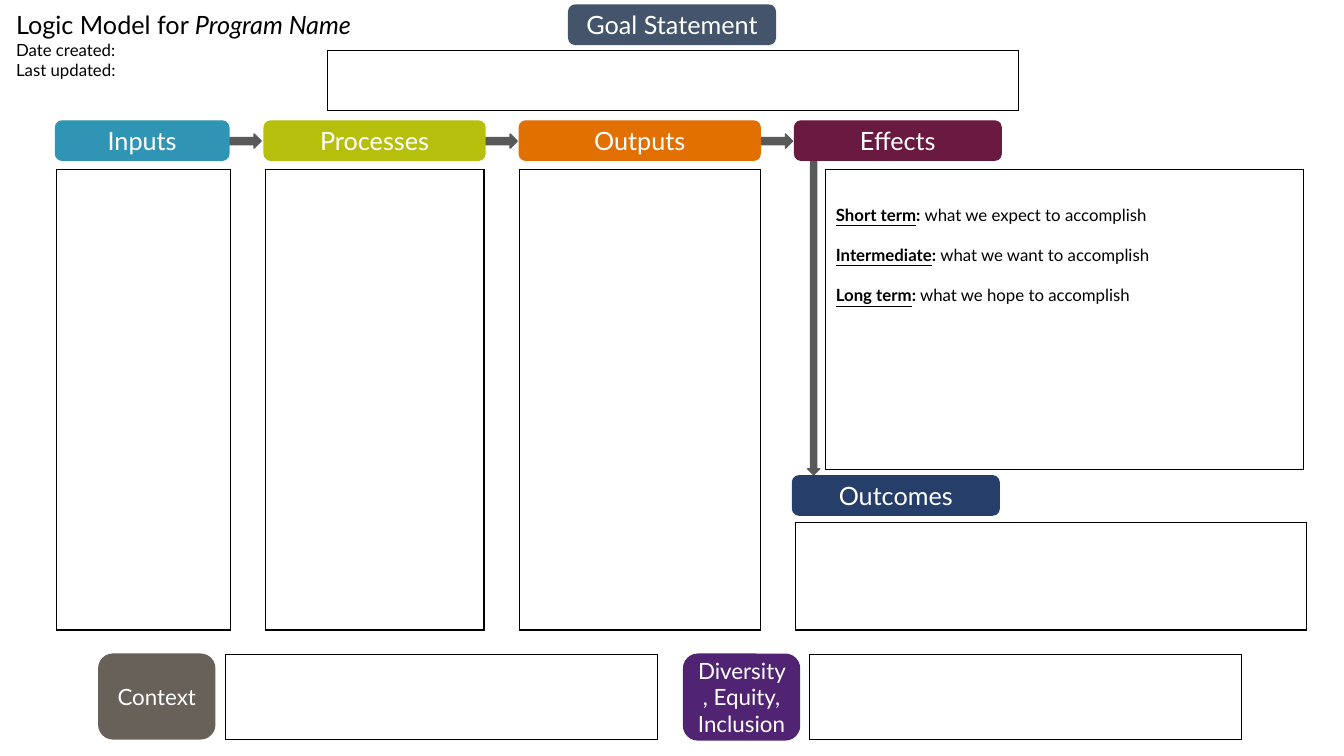
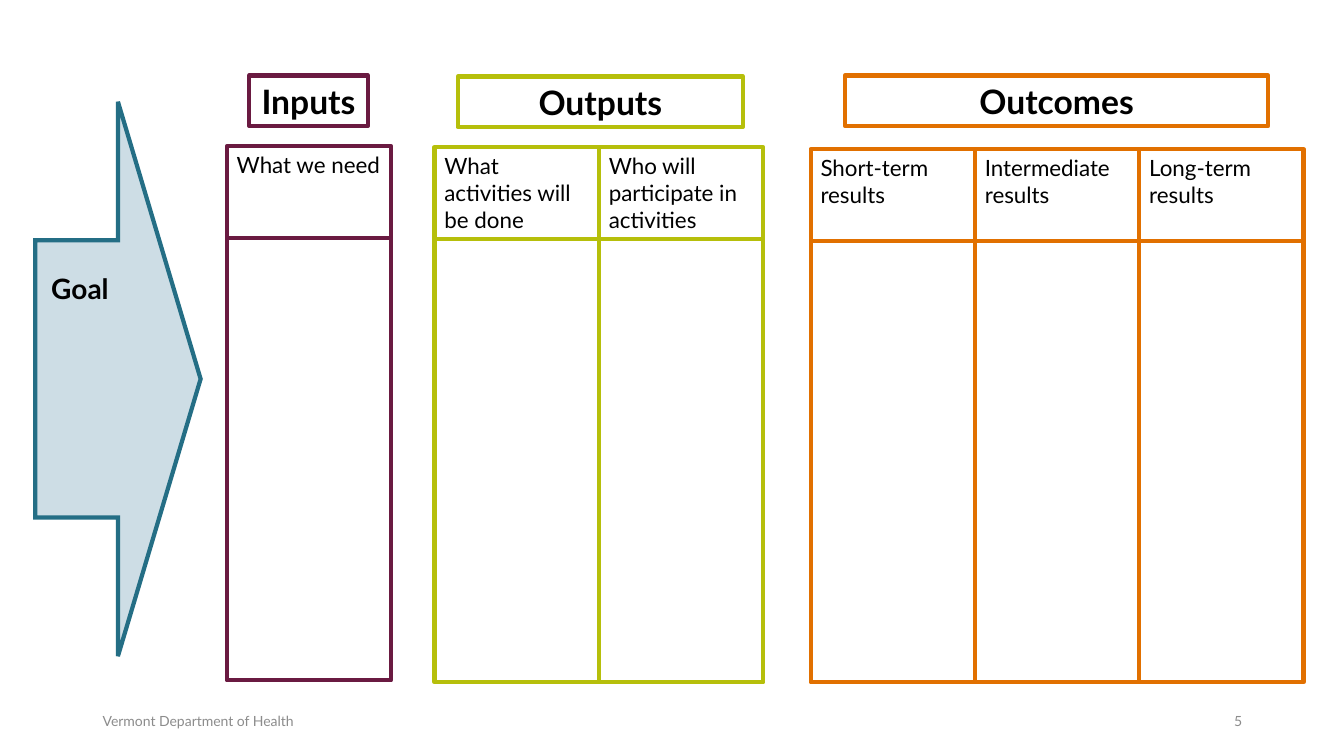
from dataclasses import dataclass

from lxml import etree
from pptx import Presentation
from pptx import util as u
from pptx.dml.color import RGBColor
from pptx.enum import shapes, text
from pptx.oxml import ns

SHAPE = shapes.MSO_SHAPE
ALIGN = text.PP_ALIGN
ANCHOR = text.MSO_ANCHOR


# Shared look
@dataclass(frozen=True)
class Theme:
    font: str = "Lato"
    black: str = "000000"
    white: str = "FFFFFF"
    arrow: str = "595959"
    footer: str = "8C8C8C"
    slate: str = "44546A"
    sky: str = "3095B4"
    lime: str = "B6BF0B"
    orange: str = "E17000"
    plum: str = "6A1A41"
    navy: str = "263F6A"
    stone: str = "68615A"
    purple: str = "512373"
    goal_fill: str = "CDDDE5"
    goal_line: str = "246E85"
    small: int = 10
    body: int = 12
    label: int = 16
    title: int = 18
    goal: int = 20
    heading: int = 24
    thin: int = 1
    thick: int = 3


THEME = Theme()


# Geometry and text records
def px(length: int) -> u.Emu:
    """One px is a hundredth of an inch."""
    return u.Emu(length * 9144)


@dataclass(frozen=True)
class Box:
    left: int
    top: int
    width: int
    height: int

    @property
    def right(self) -> int:
        return self.left + self.width

    def emu(self) -> tuple:
        return px(self.left), px(self.top), px(self.width), px(self.height)


@dataclass(frozen=True)
class Span:
    words: str
    size: int
    color: str = THEME.black
    bold: bool = False
    italic: bool = False
    underline: bool = False


@dataclass(frozen=True)
class Label:
    words: str
    box: Box
    color: str
    size: int = THEME.title


@dataclass(frozen=True)
class Group:
    name: str
    heading: Box
    color: str
    left: int
    top: int
    step: int
    bottom: int
    columns: tuple


# Drawing functions
def write(frame, lines: list, align=ALIGN.LEFT, anchor=ANCHOR.TOP, gap: float = 0) -> None:
    frame.word_wrap = True
    frame.auto_size = text.MSO_AUTO_SIZE.NONE
    frame.vertical_anchor = anchor
    fill_lines(frame, lines, align, gap)


def fill_lines(frame, lines: list, align=ALIGN.LEFT, gap: float = 0) -> None:
    for index, spans in enumerate(lines):
        para = frame.add_paragraph() if index else frame.paragraphs[0]
        para.alignment = align
        if index and gap:
            para.space_before = u.Pt(gap)
        for span in spans:
            run = para.add_run()
            run.text = span.words
            font = run.font
            font.name, font.size = THEME.font, u.Pt(span.size)
            font.bold, font.italic, font.underline = span.bold, span.italic, span.underline
            font.color.rgb = RGBColor.from_string(span.color)


def add_figure(page, kind, box: Box, line: str, weight: int, fill: str = ""):
    figure = page.shapes.add_shape(kind, *box.emu())
    figure.shadow.inherit = False
    if fill:
        figure.fill.solid()
        figure.fill.fore_color.rgb = RGBColor.from_string(fill)
    else:
        figure.fill.background()
    figure.line.color.rgb = RGBColor.from_string(line)
    figure.line.width = u.Pt(weight)
    return figure


def add_text(page, box: Box, span: Span, align=ALIGN.LEFT, anchor=ANCHOR.TOP) -> None:
    write(page.shapes.add_textbox(*box.emu()).text_frame, [[span]], align, anchor)


def add_label(page, label: Label) -> None:
    figure = add_figure(page, SHAPE.ROUNDED_RECTANGLE, label.box, label.color, THEME.thin, label.color)
    write(figure.text_frame, [[Span(label.words, label.size, THEME.white)]], ALIGN.CENTER, ANCHOR.MIDDLE)


def add_frame(page, box: Box):
    """A one-cell table with a thin black border."""
    table = page.shapes.add_table(1, 1, *box.emu()).table
    table.first_row = table.horz_banding = False
    cell = table.cell(0, 0)
    cell.fill.solid()
    cell.fill.fore_color.rgb = RGBColor.from_string(THEME.white)
    properties = cell._tc.get_or_add_tcPr()
    for index, side in enumerate(("lnL", "lnR", "lnT", "lnB")):
        border = etree.Element(ns.qn(f"a:{side}"), w=str(u.Pt(THEME.thin)))
        paint = etree.SubElement(border, ns.qn("a:solidFill"))
        etree.SubElement(paint, ns.qn("a:srgbClr"), val=THEME.black)
        properties.insert(index, border)
    return cell


def add_arrow(page, kind, box: Box) -> None:
    add_figure(page, kind, box, THEME.arrow, THEME.thin, THEME.arrow)


# Slide 1: logic model
STAGES = [
    Label("Inputs", Box(55, 120, 172, 39), THEME.sky),
    Label("Processes", Box(262, 120, 219, 39), THEME.lime),
    Label("Outputs", Box(515, 120, 239, 39), THEME.orange),
    Label("Effects", Box(788, 120, 205, 39), THEME.plum),
]
OTHER_LABELS = [
    Label("Goal Statement", Box(564, 5, 205, 39), THEME.slate),
    Label("Outcomes", Box(786, 472, 205, 39), THEME.navy),
    Label("Context", Box(98, 649, 115, 84), THEME.stone, THEME.label),
    Label("Diversity, Equity, Inclusion", Box(678, 649, 115, 85), THEME.purple, THEME.label),
]
EMPTY_FRAMES = [
    Box(56, 168, 173, 457),
    Box(263, 168, 217, 457),
    Box(515, 168, 239, 457),
    Box(325, 50, 685, 60),
    Box(789, 518, 507, 107),
    Box(224, 649, 428, 85),
    Box(803, 649, 428, 85),
]
EFFECTS = [
    ("Short term", "what we expect to accomplish"),
    ("Intermediate", "what we want to accomplish"),
    ("Long term", "what we hope to accomplish"),
]


def build_logic_model(deck) -> None:
    page = deck.slides.add_slide(deck.slide_layouts[5])

    # Title and dates
    title = page.shapes.title
    title.left, title.top, title.width, title.height = Box(6, 4, 405, 111).emu()
    write(title.text_frame, [
        [Span("Logic Model for ", THEME.title), Span("Program Name", THEME.title, italic=True)],
        [Span("Date created:", THEME.body)],
        [Span("Last updated:", THEME.body)],
    ])

    # Arrows, then labels
    add_arrow(page, SHAPE.DOWN_ARROW, Box(801, 159, 12, 312))
    for stage in STAGES[:-1]:
        add_arrow(page, SHAPE.RIGHT_ARROW, Box(stage.box.right, 133, 32, 14))
    for label in STAGES + OTHER_LABELS:
        add_label(page, label)

    # Frames to fill in
    for box in EMPTY_FRAMES:
        add_frame(page, box)
    cell = add_frame(page, Box(819, 168, 474, 298))
    cell.margin_top = px(35)
    fill_lines(cell.text_frame, [
        [Span(term, THEME.body, bold=True, underline=True),
         Span(": ", THEME.body, bold=True),
         Span(meaning, THEME.body)]
        for term, meaning in EFFECTS
    ], gap=14.4)


# Slide 2: goal and columns
GROUPS = [
    Group("Inputs", Box(247, 75, 118, 50), THEME.plum, 225, 145, 163, 675, ("What we need",)),
    Group("Outputs", Box(454, 76, 283, 50), THEME.lime, 431, 146, 163, 677,
          ("What activities will be done", "Who will participate in activities")),
    Group("Outcomes", Box(838, 75, 420, 50), THEME.orange, 804, 148, 163, 677,
          ("Short-term results", "Intermediate results", "Long-term results")),
]
QUESTION_HEIGHT = 91


def add_group(page, group: Group) -> None:
    heading = add_figure(page, SHAPE.RECTANGLE, group.heading, group.color, THEME.thick)
    write(heading.text_frame, [[Span(group.name, THEME.heading, bold=True)]], ALIGN.CENTER)
    body_top = group.top + QUESTION_HEIGHT
    for index, words in enumerate(group.columns):
        left = group.left + index * group.step
        question = add_figure(page, SHAPE.RECTANGLE, Box(left, group.top, group.step, QUESTION_HEIGHT),
                              group.color, THEME.thick)
        write(question.text_frame, [[Span(words, THEME.label)]])
        add_figure(page, SHAPE.RECTANGLE, Box(left, body_top, group.step, group.bottom - body_top),
                   group.color, THEME.thick)


def build_columns(deck) -> None:
    page = deck.slides.add_slide(deck.slide_layouts[6])

    # Goal arrow with sharp corners
    arrow = add_figure(page, SHAPE.RIGHT_ARROW, Box(35, 101, 164, 550),
                       THEME.goal_line, THEME.thick, THEME.goal_fill)
    etree.SubElement(arrow.line._get_or_add_ln(), ns.qn("a:miter"), lim="800000")
    add_text(page, Box(41, 264, 129, 44), Span("Goal", THEME.goal, bold=True))

    for group in GROUPS:
        add_group(page, group)

    # Footer
    add_text(page, Box(92, 695, 450, 40), Span("Vermont Department of Health", THEME.small, THEME.footer),
             anchor=ANCHOR.MIDDLE)
    add_text(page, Box(942, 695, 300, 40), Span("5", THEME.small, THEME.footer),
             ALIGN.RIGHT, ANCHOR.MIDDLE)


def main() -> None:
    deck = Presentation()
    deck.slide_width, deck.slide_height = px(1333), px(750)
    build_logic_model(deck)
    build_columns(deck)
    deck.save("out.pptx")


if __name__ == "__main__":
    main()
